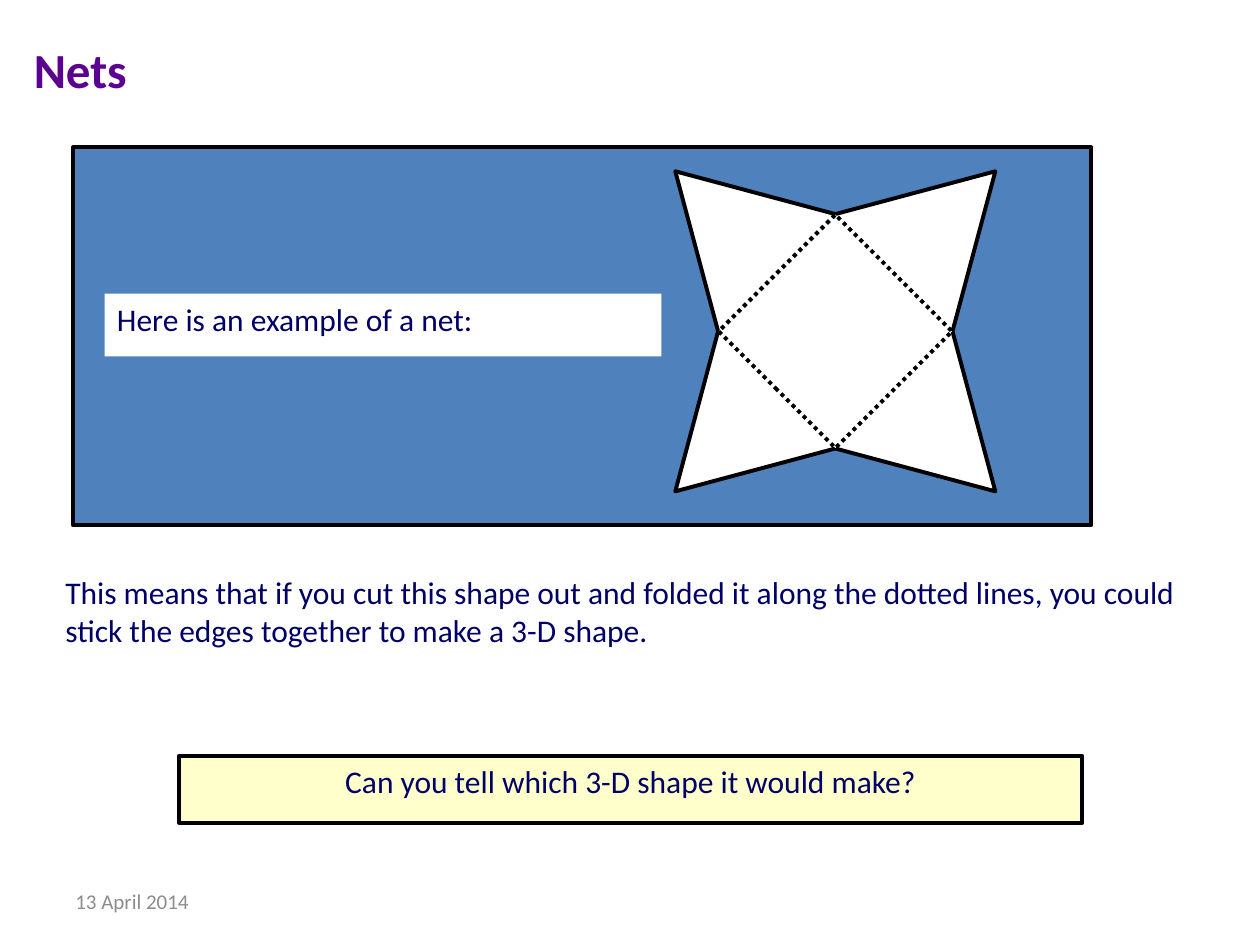
from pptx import Presentation
from pptx.dml.color import RGBColor
from pptx.enum.dml import MSO_LINE
from pptx.enum.shapes import MSO_SHAPE
from pptx.enum.text import MSO_ANCHOR, PP_ALIGN
from pptx.util import Inches, Pt

RECTANGLE = MSO_SHAPE.RECTANGLE
DOTTED = MSO_LINE.ROUND_DOT
TOP, MIDDLE = MSO_ANCHOR.TOP, MSO_ANCHOR.MIDDLE
LEFT, CENTER = PP_ALIGN.LEFT, PP_ALIGN.CENTER
NAVY, BLACK, WHITE = "000066", "000000", "FFFFFF"


def paint(shape, fill, line=None):
    shape.shadow.inherit = False
    shape.fill.solid()
    shape.fill.fore_color.rgb = RGBColor.from_string(fill)
    if line:
        shape.line.color.rgb = RGBColor.from_string(line)
        shape.line.width = Pt(2.25)
    else:
        shape.line.fill.background()


def write(box, text, size=18, color=NAVY, bold=False, align=LEFT, anchor=TOP):
    frame = box.text_frame
    frame.word_wrap = True
    frame.vertical_anchor = anchor
    para = frame.paragraphs[0]
    para.alignment = align
    span = para.add_run()
    span.text = text
    span.font.name = "Calibri"
    span.font.size = Pt(size)
    span.font.bold = bold
    span.font.color.rgb = RGBColor.from_string(color)


deck = Presentation()
deck.slide_width, deck.slide_height = Inches(10), Inches(7.5)
page = deck.slides.add_slide(deck.slide_layouts[6])
shapes = page.shapes

panel = shapes.add_shape(RECTANGLE, Inches(0.58), Inches(1.17), Inches(8.08), Inches(3))
paint(panel, "4F81BD", BLACK)

title = shapes.add_textbox(Inches(0.17), Inches(0.17), Inches(7.83), Inches(0.75))
write(title, "Nets", size=28, color="5B0091", bold=True, anchor=MIDDLE)

caption = shapes.add_shape(RECTANGLE, Inches(0.83), Inches(2.33), Inches(4.42), Inches(0.5))
paint(caption, WHITE)
write(caption, "Here is an example of a net:")

explanation = shapes.add_textbox(Inches(0.42), Inches(4.5), Inches(9.23), Inches(1.3))
write(explanation, "This means that if you cut this shape out and folded it along the dotted lines, "
                   "you could stick the edges together to make a 3-D shape.")

question = shapes.add_shape(RECTANGLE, Inches(1.42), Inches(6), Inches(7.17), Inches(0.53))
paint(question, "FFFFCC", BLACK)
write(question, "Can you tell which 3-D shape it would make?", align=CENTER)

# Net outline: outer and inner corners alternate around the centre
center_x, center_y = 6.63, 2.63
outer, inner = 1.27, 0.93
offsets = [(outer, -outer), (0, -inner), (-outer, -outer), (-inner, 0),
           (-outer, outer), (0, inner), (outer, outer), (inner, 0)]
corners = [(Inches(center_x + x), Inches(center_y + y)) for x, y in offsets]
outline = shapes.build_freeform(*corners[0])
outline.add_line_segments(corners[1:], close=True)
net = outline.convert_to_shape()
paint(net, WHITE, BLACK)

side = 1.31
folds = shapes.add_shape(RECTANGLE, Inches(center_x - side / 2), Inches(center_y - side / 2),
                         Inches(side), Inches(side))
folds.rotation = 45
paint(folds, WHITE, BLACK)
folds.line.dash_style = DOTTED

date = shapes.add_textbox(Inches(0.5), Inches(6.95), Inches(2.33), Inches(0.4))
write(date, "13 April 2014", size=12, color="8C8C8C", anchor=MIDDLE)

deck.save("out.pptx")
